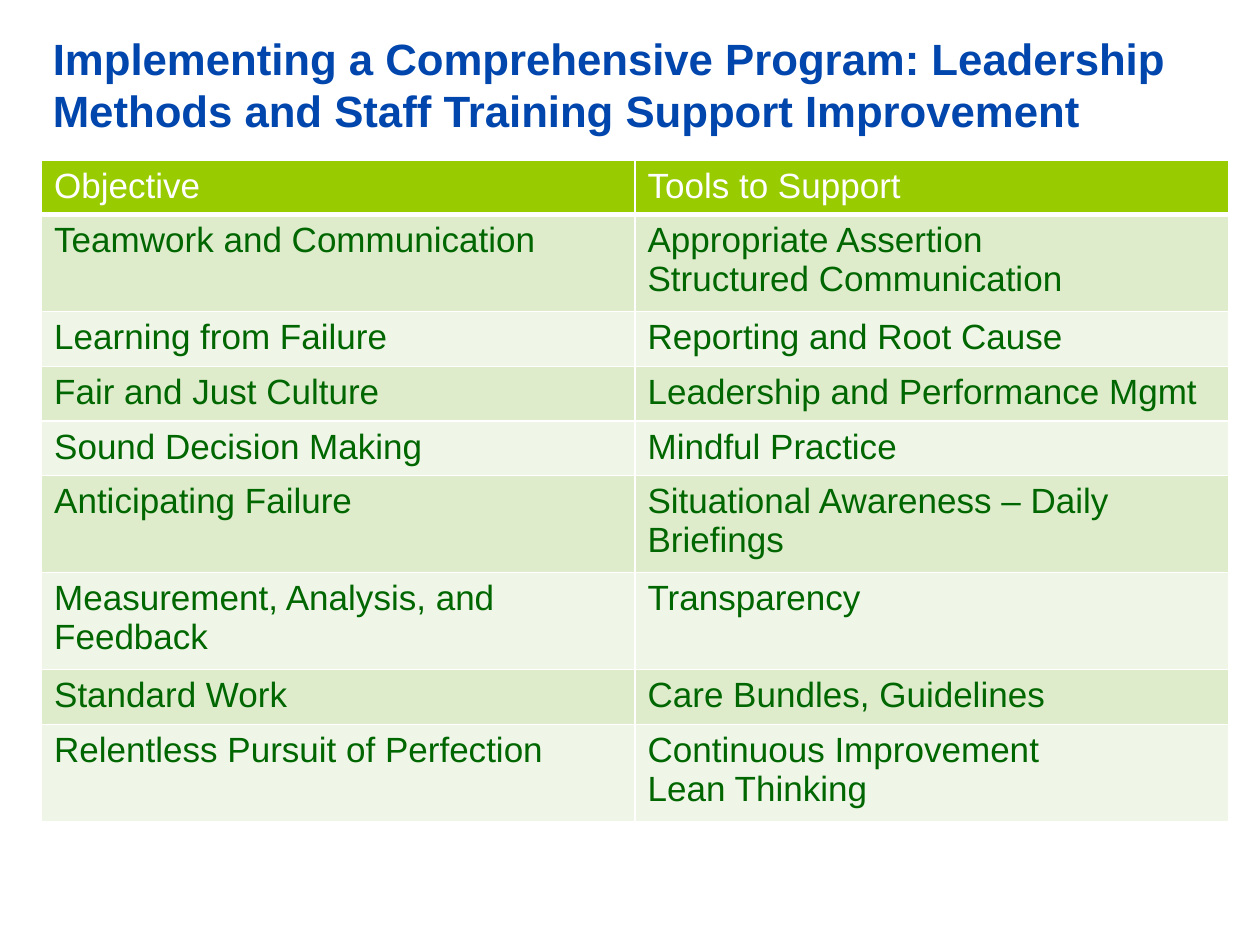
"""Build a slide with a table of improvement objectives and supporting tools."""
from lxml import etree
from pptx import Presentation
from pptx.dml.color import RGBColor
from pptx.enum.text import MSO_ANCHOR
from pptx.oxml.ns import qn
from pptx.util import Inches, Pt

MIDDLE = MSO_ANCHOR.MIDDLE
WHITE = RGBColor(0xFF, 0xFF, 0xFF)
TITLE_BLUE = RGBColor(0x00, 0x46, 0xAD)
TEXT_GREEN = RGBColor(0x00, 0x66, 0x00)
HEADER_GREEN = RGBColor(0x99, 0xCC, 0x00)
BAND_COLORS = [RGBColor(0xEF, 0xF6, 0xE7), RGBColor(0xDE, 0xEC, 0xCC)]

SINGLE_ROW = Inches(0.43)
DOUBLE_ROW = Inches(0.77)
ROWS = [
    (SINGLE_ROW, "Objective", "Tools to Support"),
    (DOUBLE_ROW, "Teamwork and Communication", "Appropriate Assertion\nStructured Communication"),
    (SINGLE_ROW, "Learning from Failure", "Reporting and Root Cause"),
    (SINGLE_ROW, "Fair and Just Culture", "Leadership and Performance Mgmt"),
    (SINGLE_ROW, "Sound Decision Making", "Mindful Practice"),
    (DOUBLE_ROW, "Anticipating Failure", "Situational Awareness – Daily Briefings"),
    (DOUBLE_ROW, "Measurement, Analysis, and Feedback", "Transparency"),
    (SINGLE_ROW, "Standard Work", "Care Bundles, Guidelines"),
    (DOUBLE_ROW, "Relentless Pursuit of Perfection", "Continuous Improvement\nLean Thinking"),
]


def write_text(text_frame, text, size=20, color=TEXT_GREEN, bold=False):
    text_frame.word_wrap = True
    text_frame.text = text
    for paragraph in text_frame.paragraphs:
        for run in paragraph.runs:
            run.font.name = "Arial"
            run.font.size = Pt(size)
            run.font.bold = bold
            run.font.color.rgb = color


def add_borders(cell, bottom_width):
    properties = cell._tc.get_or_add_tcPr()
    for side, width in (("L", 1), ("R", 1), ("T", 1), ("B", bottom_width)):
        line = etree.SubElement(properties, qn(f"a:ln{side}"), w=str(Pt(width)))
        fill = etree.SubElement(line, qn("a:solidFill"))
        etree.SubElement(fill, qn("a:srgbClr"), val=str(WHITE))


presentation = Presentation()
presentation.slide_width = Inches(10)
presentation.slide_height = Inches(7.5)
slide = presentation.slides.add_slide(presentation.slide_layouts[6])

title = slide.shapes.add_textbox(Inches(0.42), Inches(0.25), Inches(9.17), Inches(0.83))
title_frame = title.text_frame
title_frame.margin_left = title_frame.margin_right = 0
title_frame.margin_top = title_frame.margin_bottom = 0
title_frame.vertical_anchor = MIDDLE
write_text(
    title_frame,
    "Implementing a Comprehensive Program: Leadership Methods and Staff Training Support Improvement",
    size=25, color=TITLE_BLUE, bold=True,
)

table_height = sum(height for height, *_ in ROWS)
table = slide.shapes.add_table(
    len(ROWS), 2, Inches(0.33), Inches(1.27), Inches(9.42), table_height
).table
for row_index, (height, *texts) in enumerate(ROWS):
    is_header = row_index == 0
    table.rows[row_index].height = height
    for cell, text in zip(table.rows[row_index].cells, texts):
        add_borders(cell, bottom_width=3 if is_header else 1)
        cell.fill.solid()
        cell.fill.fore_color.rgb = HEADER_GREEN if is_header else BAND_COLORS[row_index % 2]
        write_text(cell.text_frame, text, color=WHITE if is_header else TEXT_GREEN)

presentation.save("out.pptx")
